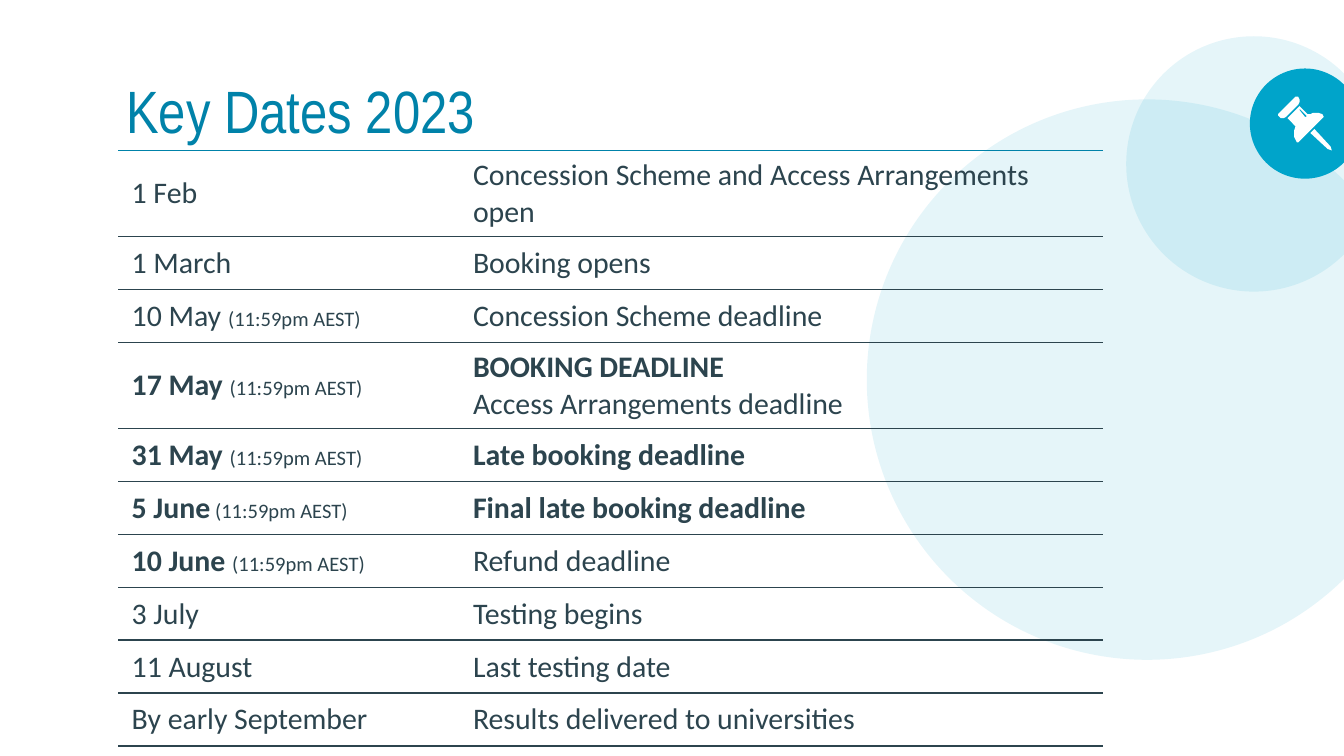
"""Build the Key Dates 2023 slide with its schedule table and pin badge."""
import lxml.etree
import pptx
import pptx.dml.color
import pptx.enum.shapes
import pptx.enum.text
import pptx.oxml.ns
import pptx.util

Inches = pptx.util.Inches
qn = pptx.oxml.ns.qn
RGBColor = pptx.dml.color.RGBColor
TEAL = RGBColor(0x00, 0x82, 0xA9)
CYAN = RGBColor(0x00, 0xA4, 0xCA)
SLATE = RGBColor(0x2C, 0x44, 0x4E)
WHITE = RGBColor(0xFF, 0xFF, 0xFF)
MIDDLE = pptx.enum.text.MSO_ANCHOR.MIDDLE

TIME = ("(11:59pm AEST)", 11, False)
SCHEDULE = [
    ([("1 Feb", 16, False)], [("Concession Scheme and Access Arrangements open", False)]),
    ([("1 March", 16, False)], [("Booking opens", False)]),
    ([("10 May ", 16, False), TIME], [("Concession Scheme deadline", False)]),
    ([("17 May ", 16, True), TIME],
     [("BOOKING DEADLINE", True), ("Access Arrangements deadline", False)]),
    ([("31 May ", 16, True), TIME], [("Late booking deadline", True)]),
    ([("5 June", 16, True), (" ", 11, True), TIME], [("Final late booking deadline", True)]),
    ([("10 June ", 16, True), TIME], [("Refund deadline", False)]),
    ([("3 July", 16, False)], [("Testing begins", False)]),
    ([("11 August", 16, False)], [("Last testing date", False)]),
    ([("By early September", 16, False)], [("Results delivered to universities", False)]),
]
TALL_ROWS = (0, 3)

NEEDLE = [[(978, 96), (990, 109), (991, 112), (988, 111), (975, 99)]]
CAP = [[(965, 72), (966, 72), (967, 74), (967, 76), (966, 78), (957, 87), (955, 88),
        (953, 88), (952, 87), (951, 86), (951, 85), (964, 72)]]
GRIP = [
    [(967, 79), (973, 85), (975, 85), (977, 84), (981, 84), (984, 85), (985, 87),
     (984, 88), (967, 105), (966, 106), (965, 106), (964, 104), (963, 102),
     (963, 97), (964, 94), (958, 88)],
    [(967, 81), (967, 82), (971, 87), (972, 87), (972, 86)],
]


def add_span(para, text, size, bold, color=SLATE, name="Calibri"):
    span = para.add_run()
    span.text = text
    looks = {"size": pptx.util.Pt(size), "bold": bold, "name": name}
    for key, value in looks.items():
        setattr(span.font, key, value)
    span.font.color.rgb = color


def paint(shape, color):
    shape.shadow.inherit = False
    shape.fill.solid()
    shape.fill.fore_color.rgb = color
    shape.line.fill.background()


deck = pptx.Presentation()
deck.slide_width, deck.slide_height = Inches(10), Inches(10) * 9 // 16
page = deck.slides.add_slide(deck.slide_layouts[6])

for left, top, size in [(6.45, 0.74, 4.17), (8.38, 0.27, 1.9)]:
    circle = page.shapes.add_shape(
        pptx.enum.shapes.MSO_SHAPE.CHORD,
        Inches(left), Inches(top), Inches(size), Inches(size))
    circle.adjustments[0], circle.adjustments[1] = 27, 189
    paint(circle, CYAN)
    tint = circle.fill._xPr.find(qn("a:solidFill"))[0]
    lxml.etree.SubElement(tint, qn("a:alpha"), val="10000")

title = page.shapes.add_textbox(Inches(0.94), Inches(0.44), Inches(7.22), Inches(0.82))
frame = {"word_wrap": True, "vertical_anchor": MIDDLE, "margin_left": 0,
         "margin_right": 0, "margin_top": 0, "margin_bottom": 0}
for key, value in frame.items():
    setattr(title.text_frame, key, value)
title.text_frame.paragraphs[0].line_spacing = 0.9
add_span(title.text_frame.paragraphs[0], "Key Dates 2023", 32, False, TEAL, "Arial Narrow")

table = page.shapes.add_table(
    len(SCHEDULE), 2, Inches(0.88), Inches(1.12), Inches(7.33), Inches(4.18)).table
table.first_row = table.horz_banding = False
table.columns[0].width, table.columns[1].width = Inches(2.54), Inches(4.79)
single_height = (Inches(4.18) - Inches(0.63)) // (len(SCHEDULE) - 1)

for index, (date, events) in enumerate(SCHEDULE):
    table.rows[index].height = Inches(0.64) if index in TALL_ROWS else single_height
    paragraphs = [[(text, 16, bold)] for text, bold in events]
    for cell, content in zip(table.rows[index].cells, [[date], paragraphs]):
        cell.vertical_anchor = MIDDLE
        cell.fill.background()
        for number, spans in enumerate(content):
            box = cell.text_frame
            para = box.add_paragraph() if number else box.paragraphs[0]
            for span in spans:
                add_span(para, *span)
        borders = {"lnL": None, "lnR": None, "lnT": SLATE if index else TEAL, "lnB": SLATE}
        for place, (side, color) in enumerate(borders.items()):
            edge = lxml.etree.Element(qn("a:" + side), w="12700")
            if color is None:
                lxml.etree.SubElement(edge, qn("a:noFill"))
            else:
                ink = lxml.etree.SubElement(edge, qn("a:solidFill"))
                lxml.etree.SubElement(ink, qn("a:srgbClr"), val=str(color))
            cell._tc.get_or_add_tcPr().insert(place, edge)

badge = page.shapes.add_shape(
    pptx.enum.shapes.MSO_SHAPE.CHORD, Inches(9.3), Inches(0.51), Inches(0.82), Inches(0.82))
badge.adjustments[0], badge.adjustments[1] = 27, 189
paint(badge, CYAN)

for contours in [NEEDLE, CAP, GRIP]:
    builder = page.shapes.build_freeform(*contours[0][0], scale=Inches(0.01))
    builder.add_line_segments(contours[0][1:], close=True)
    for contour in contours[1:]:
        builder.move_to(*contour[0])
        builder.add_line_segments(contour[1:], close=True)
    paint(builder.convert_to_shape(), WHITE)

deck.save("out.pptx")
